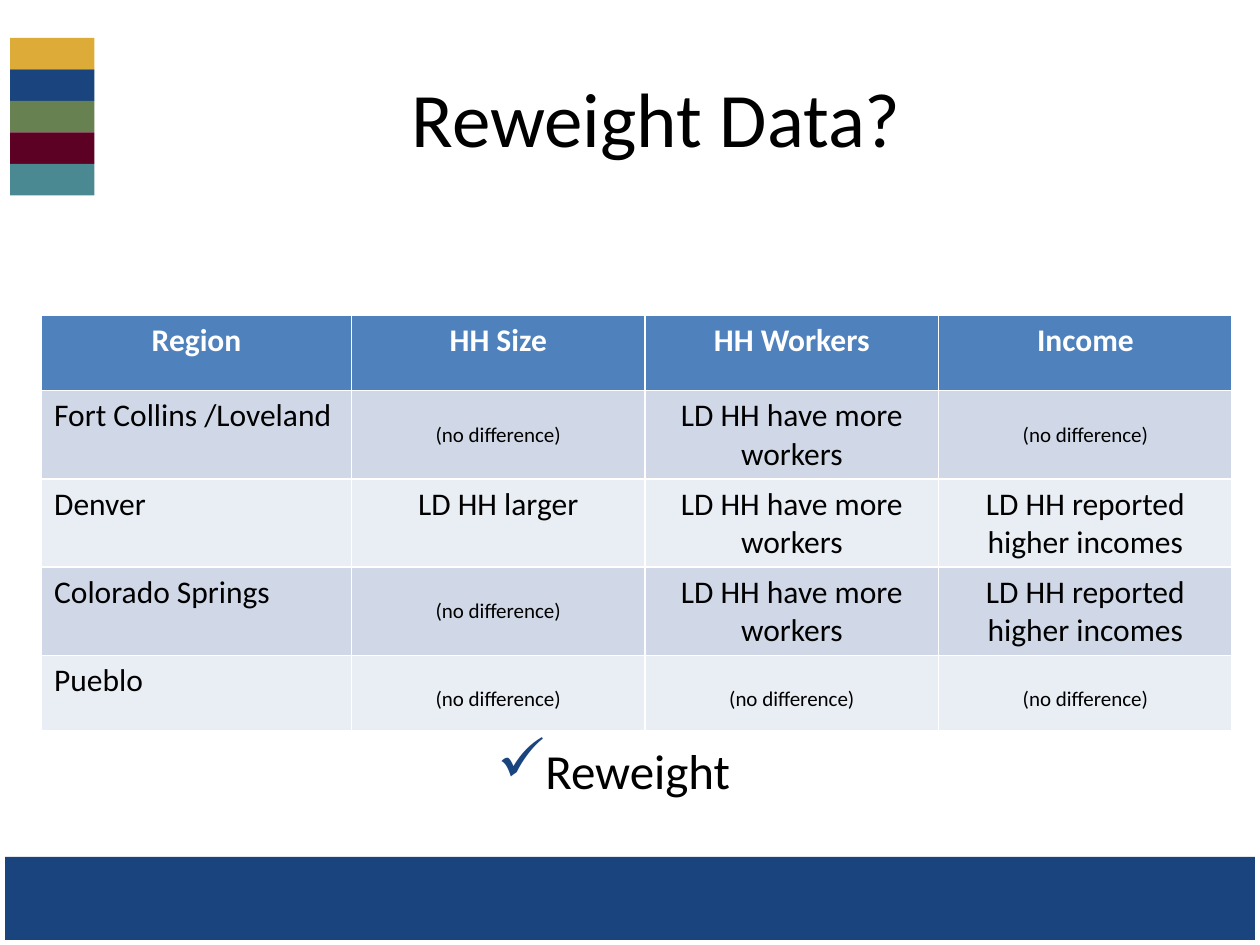
from lxml import etree
from pptx import Presentation
from pptx.dml.color import RGBColor
from pptx.enum import shapes, text
from pptx.oxml import ns
from pptx.util import Inches, Pt

WHITE = RGBColor(0xFF, 0xFF, 0xFF)
BLACK = RGBColor(0x00, 0x00, 0x00)
NAVY = RGBColor(0x19, 0x44, 0x7E)
GOLD = RGBColor(0xDD, 0xAB, 0x37)
GREEN = RGBColor(0x67, 0x82, 0x50)
MAROON = RGBColor(0x5C, 0x00, 0x24)
TEAL = RGBColor(0x4B, 0x89, 0x92)
HEADER_BLUE = RGBColor(0x4F, 0x81, 0xBD)
BANDS = (RGBColor(0xD0, 0xD8, 0xE8), RGBColor(0xE9, 0xED, 0xF4))

TITLE = "Reweight Data?"
CONCLUSION = "Reweight"
STRIPES = (GOLD, NAVY, GREEN, MAROON, TEAL)
SAME = "(no difference)"
WORKERS = "LD HH have more workers"
INCOMES = "LD HH reported higher incomes"
ROWS = [
    ("Region", "HH Size", "HH Workers", "Income"),
    ("Fort Collins /Loveland", SAME, WORKERS, SAME),
    ("Denver", "LD HH larger", WORKERS, INCOMES),
    ("Colorado Springs", SAME, WORKERS, INCOMES),
    ("Pueblo", SAME, SAME, SAME),
]
COLUMN_WIDTHS = (2.46, 2.33, 2.33, 2.33)
ROW_HEIGHT = 0.6


def add_rectangle(slide, left, top, width, height, fill=None):
    box = slide.shapes.add_shape(
        shapes.MSO_SHAPE.RECTANGLE, *map(Inches, (left, top, width, height)))
    box.shadow.inherit = False
    if fill is None:
        box.fill.background()
    else:
        box.fill.solid()
        box.fill.fore_color.rgb = fill
        box.line.fill.background()
    return box


def write(para, words, size, color=BLACK, bold=False, align=text.PP_ALIGN.CENTER):
    para.alignment = align
    span = para.add_run()
    span.text = words
    for name, value in {"name": "Calibri", "size": Pt(size), "bold": bold}.items():
        setattr(span.font, name, value)
    span.font.color.rgb = color


def add_text(slide, left, top, width, height, anchor):
    """Add a wrapping text box and return its first paragraph."""
    box = slide.shapes.add_textbox(*map(Inches, (left, top, width, height)))
    box.text_frame.word_wrap = True
    box.text_frame.vertical_anchor = anchor
    return box.text_frame.paragraphs[0]


def add_check_bullet(para, color):
    props = para._p.get_or_add_pPr()
    props.set("marL", str(Inches(0.38)))
    props.set("indent", str(-Inches(0.38)))
    bullet_color = etree.SubElement(props, ns.qn("a:buClr"))
    etree.SubElement(bullet_color, ns.qn("a:srgbClr"), val=str(color))
    etree.SubElement(props, ns.qn("a:buSzPct"), val="125000")
    etree.SubElement(props, ns.qn("a:buChar"), char="✓")


def add_region_table(slide):
    frame = slide.shapes.add_table(
        len(ROWS), len(COLUMN_WIDTHS), Inches(0.33), Inches(2.5),
        Inches(sum(COLUMN_WIDTHS)), Inches(ROW_HEIGHT * len(ROWS)))
    table = frame.table
    for column, width in zip(table.columns, COLUMN_WIDTHS):
        column.width = Inches(width)
    for r, row in enumerate(ROWS):
        table.rows[r].height = Inches(ROW_HEIGHT)
        for c, words in enumerate(row):
            cell = table.cell(r, c)
            header = r == 0
            cell.fill.solid()
            cell.fill.fore_color.rgb = HEADER_BLUE if header else BANDS[(r - 1) % 2]
            if words == SAME:
                cell.margin_top = Inches(0.25)
            left = c == 0 and not header
            write(cell.text_frame.paragraphs[0], words,
                  size=12 if words == SAME else 18,
                  color=WHITE if header else BLACK, bold=header,
                  align=text.PP_ALIGN.LEFT if left else text.PP_ALIGN.CENTER)


def main():
    deck = Presentation()
    deck.slide_width, deck.slide_height = Inches(10), Inches(7.5)
    slide = deck.slides.add_slide(deck.slide_layouts[6])

    add_rectangle(slide, 0, 6.8, 10, 0.7, NAVY)
    for i, color in enumerate(STRIPES):
        add_rectangle(slide, 0.08, 0.3 + 0.25 * i, 0.67, 0.25, color)
    border = add_rectangle(slide, 0, 0, 10, 7.5)
    border.line.color.rgb = WHITE
    border.line.width = Pt(6)

    write(add_text(slide, 0.92, 0.3, 8.58, 1.25, text.MSO_ANCHOR.MIDDLE), TITLE, 44)
    add_region_table(slide)
    conclusion = add_text(slide, 0.33, 5.83, 9.08, 1, text.MSO_ANCHOR.TOP)
    add_check_bullet(conclusion, NAVY)
    write(conclusion, CONCLUSION, 28)

    deck.save("out.pptx")


if __name__ == "__main__":
    main()
